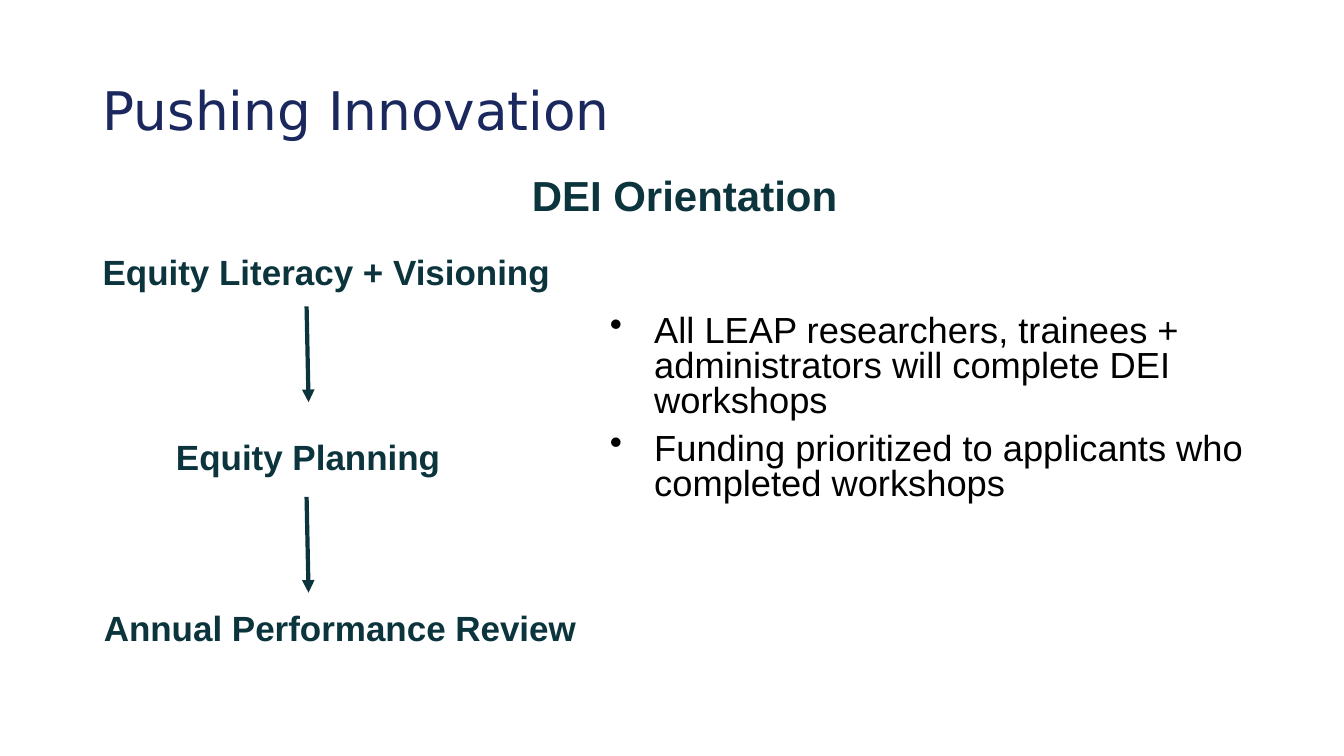
"""Build the Pushing Innovation slide, with lengths in percent of the slide's size."""
from lxml import etree
from pptx import Presentation
from pptx import util as u
from pptx.dml.color import RGBColor
from pptx.enum import shapes, text
from pptx.oxml.ns import qn

NAVY = RGBColor(0x1B, 0x28, 0x5E)
TEAL = RGBColor(0x0C, 0x34, 0x3D)
BLACK = RGBColor(0, 0, 0)
WIDTH, HEIGHT = u.Inches(13.33), u.Inches(7.5)
LEFT, CENTER = text.PP_ALIGN.LEFT, text.PP_ALIGN.CENTER
TOP, MIDDLE, BOTTOM = text.MSO_ANCHOR.TOP, text.MSO_ANCHOR.MIDDLE, text.MSO_ANCHOR.BOTTOM
LABEL_HEIGHT = 9.47
ARROW_X, ARROW_DRIFT, ARROW_LENGTH = 22.81, 0.15, 12.67


def across(percent):
    return round(WIDTH * percent / 100)


def down(percent):
    return round(HEIGHT * percent / 100)


def add_text(slide, area, lines, size, color, font="Arial", bold=False,
             align=LEFT, anchor=TOP, spacing=None, before=0, inset=0.05):
    left, top, width, height = area
    frame = slide.shapes.add_textbox(
        across(left), down(top), across(width), down(height)).text_frame
    frame.word_wrap = True
    frame.vertical_anchor = anchor
    frame.margin_left = frame.margin_right = u.Inches(0.1)
    frame.margin_top = frame.margin_bottom = u.Inches(inset)
    frame.text = "\n".join(lines)
    for paragraph in frame.paragraphs:
        paragraph.alignment = align
        paragraph.line_spacing = spacing
        paragraph.space_before = u.Pt(before)
        paragraph.font.name = font
        paragraph.font.size = u.Pt(size)
        paragraph.font.bold = bold
        paragraph.font.color.rgb = color
    return frame.paragraphs


def indent(paragraph, hanging, bullet=None):
    properties = paragraph._p.get_or_add_pPr()
    properties.set("marL", str(u.Inches(0.5)))
    properties.set("indent", str(-u.Inches(hanging)))
    if bullet:
        mark = etree.Element(qn("a:buChar"), char=bullet)
        properties.find(qn("a:defRPr")).addprevious(mark)


def add_label(slide, left, top, width, label, align=CENTER):
    add_text(slide, (left, top, width, LABEL_HEIGHT), [label], 25, TEAL,
             bold=True, align=align, inset=0.1)


def add_arrow(slide, top):
    arrow = slide.shapes.add_connector(
        shapes.MSO_CONNECTOR.STRAIGHT, across(ARROW_X), down(top),
        across(ARROW_X + ARROW_DRIFT), down(top + ARROW_LENGTH))
    arrow.line.color.rgb = TEAL
    arrow.line.width = u.Pt(3)
    etree.SubElement(arrow.line._get_or_add_ln(), qn("a:tailEnd"), type="triangle")
    etree.SubElement(arrow._element.spPr, qn("a:effectLst"))


def main():
    deck = Presentation()
    deck.slide_width, deck.slide_height = WIDTH, HEIGHT
    slide = deck.slides.add_slide(deck.slide_layouts[6])

    add_text(slide, (6.9, 5.33, 86.27, 19.33), ["Pushing Innovation"], 38, NAVY,
             font="DejaVu Sans", anchor=MIDDLE, spacing=0.9)
    orientation = add_text(
        slide, (22.81, 20.4, 54.39, LABEL_HEIGHT), ["DEI Orientation"], 30, TEAL,
        bold=True, align=CENTER, anchor=BOTTOM, spacing=0.9, before=10)
    indent(orientation[0], 0.25)

    add_label(slide, 6.9, 31.87, 36.83, "Equity Literacy + Visioning", LEFT)
    add_label(slide, 6.23, 56.27, 33.38, "Equity Planning")
    add_label(slide, 6.38, 78.93, 37.81, "Annual Performance Review")
    for top in (40.53, 65.73):
        add_arrow(slide, top)

    commitments = add_text(slide, (44.19, 41.07, 51.61, 31.87), [
        "All LEAP researchers, trainees + administrators will complete DEI workshops",
        "Funding prioritized to applicants who completed workshops",
    ], 25.9, BLACK, spacing=0.8, before=10)
    for commitment in commitments:
        indent(commitment, 0.44, "•")

    deck.save("out.pptx")


if __name__ == "__main__":
    main()
